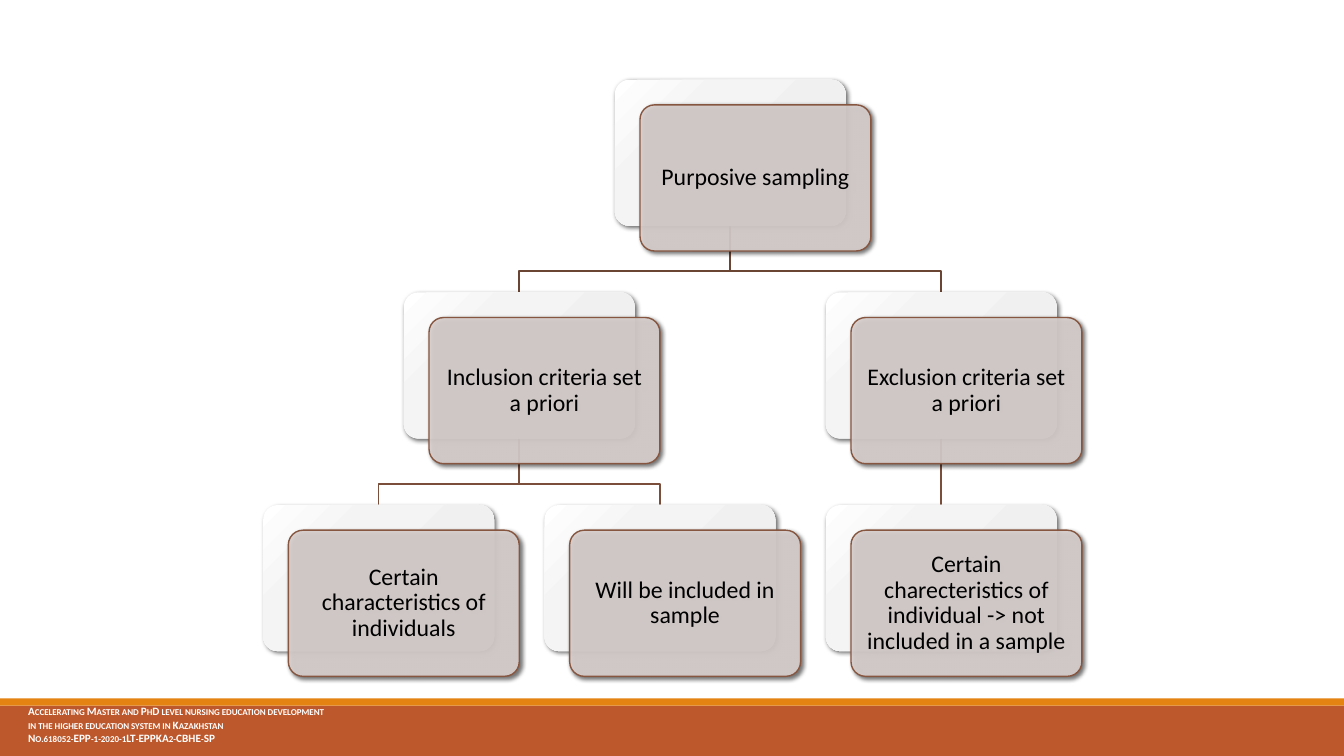
from lxml import etree
from pptx import Presentation
from pptx.dml.color import RGBColor
from pptx.enum.shapes import MSO_CONNECTOR, MSO_SHAPE
from pptx.enum.text import MSO_ANCHOR, PP_ALIGN
from pptx.oxml import parse_xml
from pptx.oxml.ns import nsdecls, qn
from pptx.util import Inches, Pt

RECT, ROUNDED = MSO_SHAPE.RECTANGLE, MSO_SHAPE.ROUNDED_RECTANGLE
STRAIGHT = MSO_CONNECTOR.STRAIGHT
TOP, MIDDLE = MSO_ANCHOR.TOP, MSO_ANCHOR.MIDDLE
LEFT, CENTER = PP_ALIGN.LEFT, PP_ALIGN.CENTER

PAGE_WIDTH, PAGE_HEIGHT = 13.33, 7.5
TREE_LEFT, TREE_TOP = 2.61, 0.79
COLUMN, ROW = 2.79, 2.11
CARD_WIDTH, CARD_HEIGHT = 2.29, 1.45
OFFSET_X, OFFSET_Y = 0.25, 0.25
BEND = 0.21
GLOW = [(0, "EEEEEE"), (34, "F0F0F0"), (70, "F4F4F4"), (100, "FFFFFF")]

NODES = {
    "root": (1.25, 0, "Purposive sampling"),
    "inclusion": (0.5, 1, "Inclusion criteria set a priori"),
    "individuals": (0, 2, "Certain characteristics of individuals"),
    "included": (1, 2, "Will be included in sample"),
    "exclusion": (2, 1, "Exclusion criteria set a priori"),
    "excluded": (2, 2, "Certain charecteristics of individual -> not included in a sample"),
}
BRANCHES = [
    ("exclusion", "excluded", "7A4E3A"),
    ("root", "exclusion", "6B4533"),
    ("inclusion", "included", "7A4E3A"),
    ("inclusion", "individuals", "7A4E3A"),
    ("root", "inclusion", "6B4533"),
]
FOOTER = [
    "Accelerating Master and PhD level nursing education development",
    "in the higher education system in Kazakhstan",
    "No.618052-EPP-1-2020-1LT-EPPKA2-CBHE-SP",
]


def color(value):
    """Turn a hex string into a colour."""
    return RGBColor.from_string(value)


def place(node):
    """Give the left and top of a node on the tree grid."""
    column, row, _ = NODES[node]
    return TREE_LEFT + column * COLUMN, TREE_TOP + row * ROW


def add_box(page, kind, left, top, width, height, fill=None, line=None):
    """Add a preset shape with a plain fill and an optional outline."""
    box = page.shapes.add_shape(kind, *map(Inches, (left, top, width, height)))
    box.shadow.inherit = False
    if fill:
        box.fill.solid()
        box.fill.fore_color.rgb = color(fill)
    else:
        box.fill.background()
    if line:
        box.line.color.rgb = color(line)
        box.line.width = Pt(1)
    else:
        box.line.fill.background()
    if kind == ROUNDED:
        box.adjustments[0] = 0.1
    return box


def cast_shadow(box, blur):
    """Drop a soft shadow to the lower right."""
    effects = box._element.spPr.find(qn("a:effectLst"))
    effects.append(parse_xml(
        f'<a:outerShdw {nsdecls("a")} blurRad="{Pt(blur)}" dist="{Pt(2)}" '
        f'dir="{45 * 60000}" algn="tl" rotWithShape="0"><a:srgbClr val="000000">'
        '<a:alpha val="60000"/></a:srgbClr></a:outerShdw>'))


def fill_glow(box):
    """Fill a shape with a radial gradient from its lower right corner."""
    stops = "".join(f'<a:gs pos="{share * 1000}"><a:srgbClr val="{tone}"/></a:gs>'
                    for share, tone in GLOW)
    gradient = parse_xml(
        f'<a:gradFill {nsdecls("a")} rotWithShape="1"><a:gsLst>{stops}</a:gsLst>'
        '<a:path path="circle"><a:fillToRect l="100000" t="100000"/></a:path></a:gradFill>')
    properties = box._element.spPr
    properties.replace(properties.find(qn("a:noFill")), gradient)


def write(box, lines, size, tone, anchor=TOP, align=LEFT, inset=(0.1, 0.05),
          spacing=1.0, bold=False, small_caps=False):
    """Write paragraphs into a shape."""
    frame = box.text_frame
    frame.word_wrap = True
    frame.vertical_anchor = anchor
    frame.margin_left = frame.margin_right = Inches(inset[0])
    frame.margin_top = frame.margin_bottom = Inches(inset[1])
    for index, text in enumerate(lines):
        para = frame.add_paragraph() if index else frame.paragraphs[0]
        para.alignment = align
        para.line_spacing = spacing
        span = para.add_run()
        span.text = text
        span.font.name = "Calibri"
        span.font.size = Pt(size)
        span.font.bold = bold
        span.font.color.rgb = color(tone)
        if small_caps:
            span.font._element.set("cap", "small")


def add_branch(page, parent, child, tone):
    """Link a parent card to a child card, with a bend if they are not in line."""
    (start_x, start_y), (end_x, end_y) = place(parent), place(child)
    start_x, end_x = start_x + CARD_WIDTH / 2, end_x + CARD_WIDTH / 2
    start_y += CARD_HEIGHT
    if start_x == end_x:
        branch = page.shapes.add_connector(
            STRAIGHT, *map(Inches, (start_x, start_y, end_x, end_y)))
        etree.SubElement(branch._element.spPr, qn("a:effectLst"))
    else:
        bend_y = end_y - BEND
        builder = page.shapes.build_freeform(Inches(start_x), Inches(start_y))
        corners = [(start_x, bend_y), (end_x, bend_y), (end_x, end_y)]
        builder.add_line_segments([(Inches(x), Inches(y)) for x, y in corners], close=False)
        branch = builder.convert_to_shape()
        branch.fill.background()
        branch.shadow.inherit = False
    branch.line.color.rgb = color(tone)
    branch.line.width = Pt(1.25)


def add_card(page, node):
    """Add a pale back card and a labelled front card."""
    left, top = place(node)
    back = add_box(page, ROUNDED, left, top, CARD_WIDTH, CARD_HEIGHT)
    fill_glow(back)
    cast_shadow(back, 3.5)
    front = add_box(page, ROUNDED, left + OFFSET_X, top + OFFSET_Y,
                    CARD_WIDTH, CARD_HEIGHT, "D9D1CF", "865640")
    tint = front._element.spPr.find(qn("a:solidFill"))[0]
    etree.SubElement(tint, qn("a:alpha")).set("val", "90000")
    cast_shadow(front, 3)
    write(front, [NODES[node][2]], 17, "000000", MIDDLE, CENTER, (0.07, 0.07), 0.9)


def add_footer(page):
    """Add the two footer bands and the project title."""
    add_box(page, RECT, 0, 7, PAGE_WIDTH, 0.5, "BD582C")
    add_box(page, RECT, 0, 6.93, PAGE_WIDTH, 0.07, "E48312")
    title = page.shapes.add_textbox(*map(Inches, (0.18, 6.94, 4.59, 0.5)))
    write(title, FOOTER, 8, "FFFFFF", bold=True, small_caps=True)


def main():
    """Build the sampling tree."""
    deck = Presentation()
    deck.slide_width, deck.slide_height = Inches(PAGE_WIDTH), Inches(PAGE_HEIGHT)
    page = deck.slides.add_slide(deck.slide_layouts[6])
    add_footer(page)
    for parent, child, tone in BRANCHES:
        add_branch(page, parent, child, tone)
    for node in NODES:
        add_card(page, node)
    deck.save("out.pptx")


if __name__ == "__main__":
    main()
